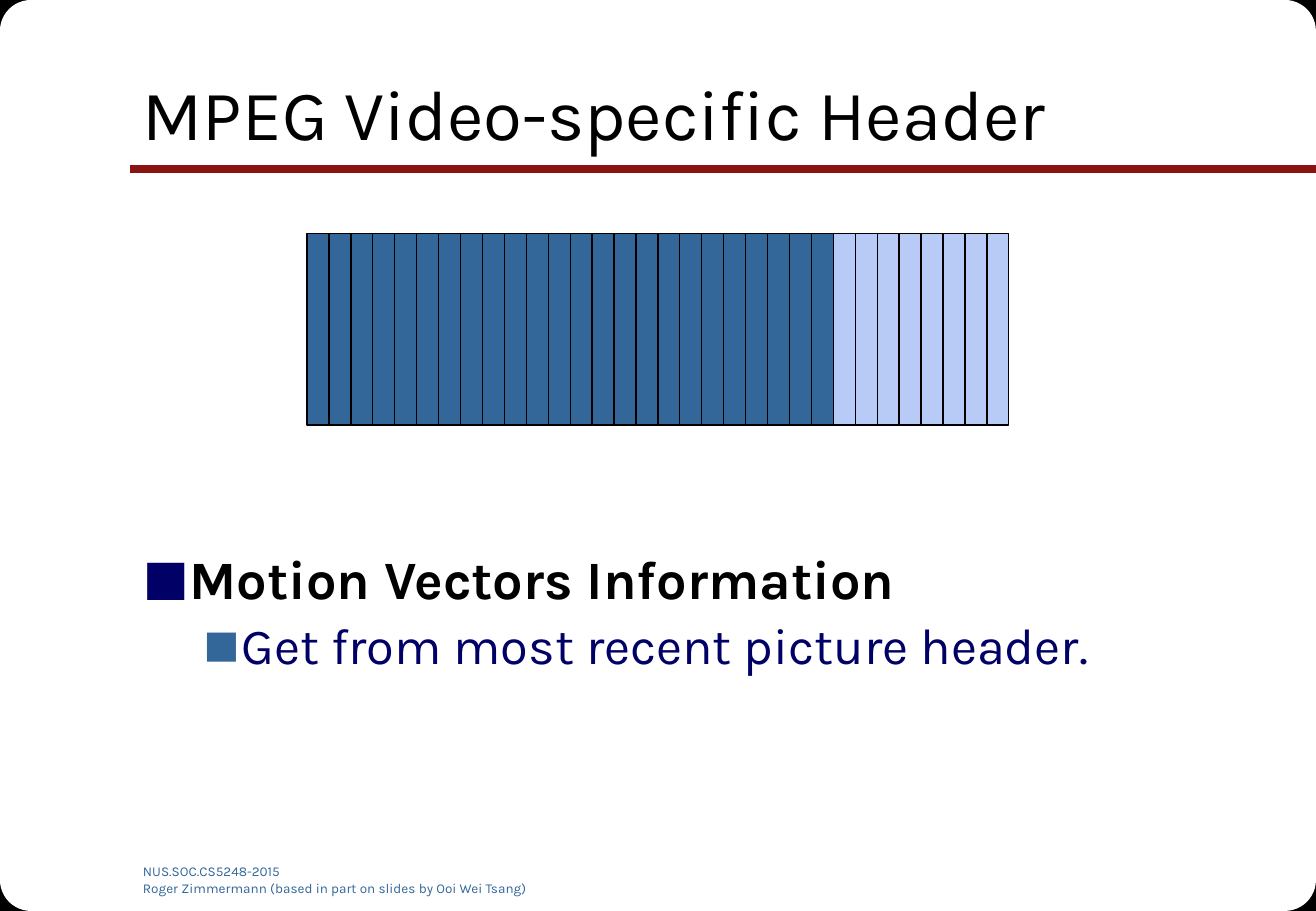
from lxml.etree import SubElement
from pptx import Presentation
from pptx.dml.color import RGBColor
from pptx.enum.shapes import MSO_CONNECTOR as Connector, MSO_SHAPE as Shape
from pptx.enum.text import MSO_ANCHOR as Anchor
from pptx.oxml.ns import qn
from pptx.util import Cm, Pt

FONT = "Karla"
SLIDE_W, SLIDE_H = 27.51, 19.05
BITS, DARK_BITS = 32, 24
BLACK, WHITE, NAVY, STEEL = "000000", "FFFFFF", "000066", "336699"
BULLETS = [
    {"text": "Motion Vectors Information", "level": 0, "left": 0.97, "hang": 0.97,
     "bullet": NAVY, "scale": 90, "font": {"size": Pt(32), "bold": True}, "color": BLACK},
    {"text": "Get from most recent picture header.", "level": 1, "left": 2.06, "hang": 0.79,
     "bullet": STEEL, "scale": 75, "font": {"size": Pt(30), "bold": False}, "color": NAVY},
]


def rgb(value):
    """Turn a hex string into a colour."""
    return RGBColor.from_string(value)


def add_block(slide, kind, box, fill, line=None):
    """Draw a filled shape in a box, outlined only when a line colour is given."""
    block = slide.shapes.add_shape(kind, *map(Cm, box))
    block.shadow.inherit = False
    block.fill.solid()
    block.fill.fore_color.rgb = rgb(fill)
    if line:
        block.line.color.rgb = rgb(line)
        block.line.width = Pt(0.75)
    else:
        block.line.fill.background()


def add_frame(slide, box):
    """Add a wrapping text box and return its text frame."""
    frame = slide.shapes.add_textbox(*map(Cm, box)).text_frame
    frame.word_wrap = True
    return frame


def write(paragraph, text, color, formats):
    """Add a run to a paragraph with the given format values."""
    run = paragraph.add_run()
    run.text = text
    run.font.name = FONT
    run.font.color.rgb = rgb(color)
    for name, value in formats.items():
        setattr(run.font, name, value)


def add_corners(slide, box):
    """Round off the four corners of the box against black."""
    left, top, width, height = box
    layers = [(Shape.RECTANGLE, 1.18, 1.12, BLACK, BLACK),
              (Shape.ROUNDED_RECTANGLE, 4.22, 3.89, WHITE, None)]
    for kind, w, h, fill, line in layers:
        for x in (left, left + width - w):
            for y in (top, top + height - h):
                add_block(slide, kind, (x, y, w, h), fill, line)


def add_title(slide, box):
    """Write the slide title with the red rule through the lower part of its box."""
    left, top, _, _ = box
    rule_y = Cm(top + 2.77)
    rule = slide.shapes.add_connector(
        Connector.STRAIGHT, Cm(SLIDE_W), rule_y, Cm(left - 0.02), rule_y)
    rule.line.color.rgb = rgb("891411")
    rule.line.width = Pt(4.5)
    SubElement(rule._element.spPr, qn("a:effectLst"))
    frame = add_frame(slide, box)
    frame.vertical_anchor = Anchor.MIDDLE
    write(frame.paragraphs[0], "MPEG Video-specific Header", BLACK, {"size": Pt(42)})


def add_header_bits(slide, box):
    """Divide the box into equal bits, the first ones dark."""
    left, top, width, height = box
    bit_w = width / BITS
    for bit in range(BITS):
        fill = STEEL if bit < DARK_BITS else "B8CBF7"
        add_block(slide, Shape.RECTANGLE, (left + bit * bit_w, top, bit_w, height), fill, BLACK)


def set_bullet(paragraph, item):
    """Give a paragraph its indent, relative spacing and square bullet."""
    props = paragraph._p.get_or_add_pPr()
    props.set("marL", str(Cm(item["left"])))
    props.set("indent", str(-Cm(item["hang"])))
    before = SubElement(props, qn("a:spcBef"))
    SubElement(before, qn("a:spcPct"), val="20000")
    color = SubElement(props, qn("a:buClr"))
    SubElement(color, qn("a:srgbClr"), val=item["bullet"])
    SubElement(props, qn("a:buSzPct"), val=str(item["scale"] * 1000))
    SubElement(props, qn("a:buFont"), typeface=FONT)
    SubElement(props, qn("a:buChar"), char="■")


def add_bullets(slide, box):
    """Write the bulleted body text."""
    frame = add_frame(slide, box)
    for index, item in enumerate(BULLETS):
        paragraph = frame.add_paragraph() if index else frame.paragraphs[0]
        paragraph.level = item["level"]
        paragraph.line_spacing = 0.9
        set_bullet(paragraph, item)
        write(paragraph, item["text"], item["color"], item["font"])


def add_footer(slide, box):
    """Write the course and author lines."""
    frame = add_frame(slide, box)
    lines = ["NUS.SOC.CS5248-2015",
             "Roger Zimmermann (based in part on slides by Ooi Wei Tsang)"]
    for index, line in enumerate(lines):
        paragraph = frame.add_paragraph() if index else frame.paragraphs[0]
        write(paragraph, line, STEEL, {"size": Pt(8)})


def main():
    """Build the slide and save it."""
    deck = Presentation()
    deck.slide_width, deck.slide_height = Cm(SLIDE_W), Cm(SLIDE_H)
    slide = deck.slides.add_slide(deck.slide_layouts[6])
    add_corners(slide, (0, 0, SLIDE_W, SLIDE_H))
    add_title(slide, (2.74, 0.76, 23.39, 3.18))
    add_footer(slide, (2.74, 17.93, 8.69, 0.71))
    add_bullets(slide, (2.74, 11.43, 23.39, 5.59))
    add_header_bits(slide, (6.42, 4.88, 14.67, 4.01))
    deck.save("out.pptx")


if __name__ == "__main__":
    main()
